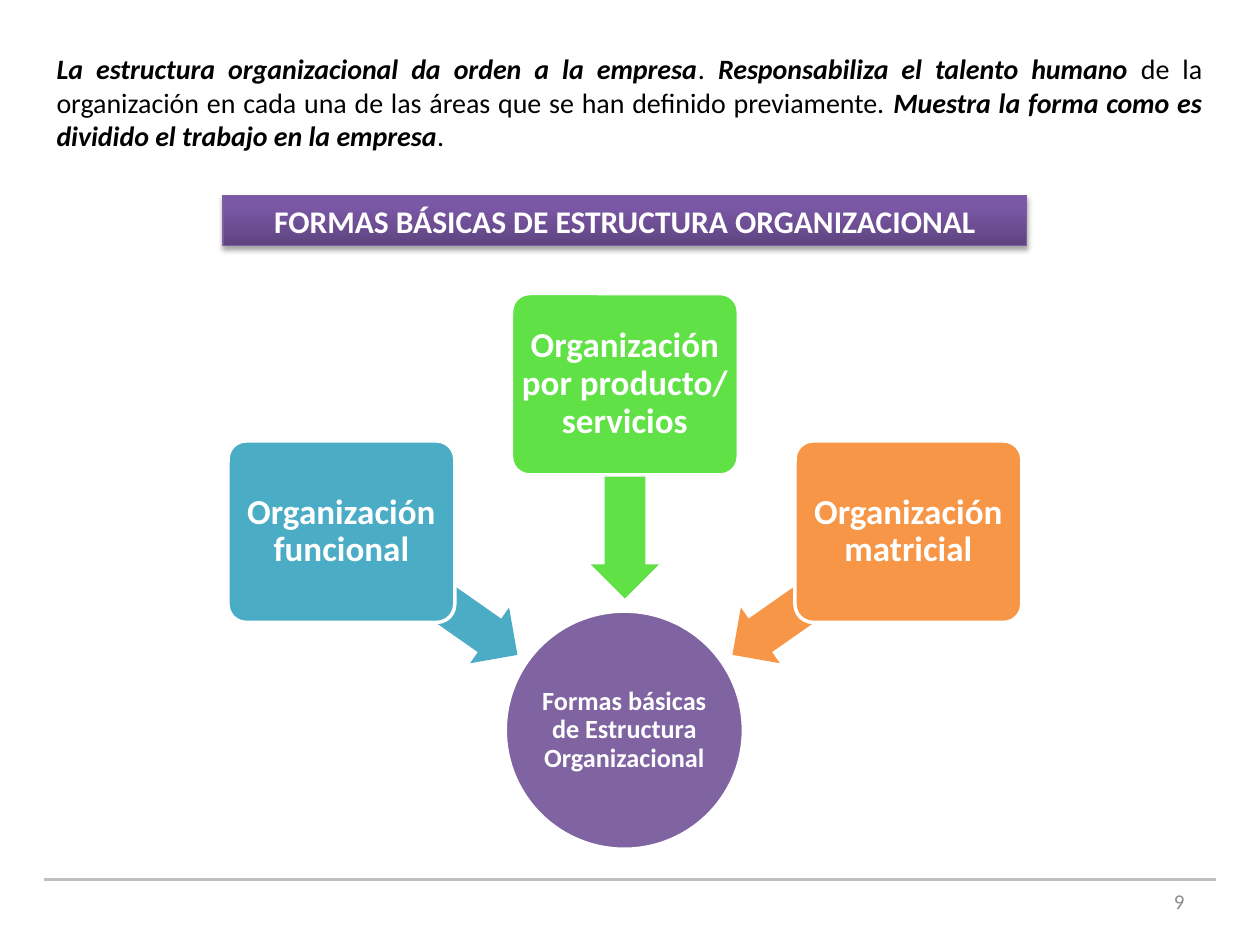
from copy import deepcopy

from lxml import etree
from pptx import Presentation
from pptx import util as u
from pptx.dml.color import RGBColor
from pptx.enum import shapes, text
from pptx.oxml import ns

FONT = "Calibri"
BLACK = RGBColor(0x00, 0x00, 0x00)
WHITE = RGBColor(0xFF, 0xFF, 0xFF)
PURPLE = RGBColor(0x80, 0x64, 0xA2)
TEAL = RGBColor(0x4B, 0xAC, 0xC6)
GREEN = RGBColor(0x60, 0xE1, 0x46)
ORANGE = RGBColor(0xF7, 0x96, 0x46)
RULE_GREY = RGBColor(0xBF, 0xBF, 0xBF)
NUMBER_GREY = RGBColor(0x8C, 0x8C, 0x8C)
BANNER_EDGE = RGBColor(0x7D, 0x60, 0xA0)
BANNER_STOPS = [
    (0, RGBColor(0x5F, 0x44, 0x80)),
    (0.8, RGBColor(0x7B, 0x58, 0xA6)),
    (1, RGBColor(0x7C, 0x57, 0xA8)),
]

CARD_LEFT, CARD_STEP, CARD_WIDTH, CARD_HEIGHT = 1.81, 2.25, 1.8, 1.44
ARROW_CENTRE, ARROW_STEP, ARROW_WIDTH, ARROW_HEIGHT = 3.41, 1.55, 1.7, 0.54

FORMS = [
    ("Organización funcional", TEAL, 3.5, 4.71, 215),
    ("Organización por producto/ servicios", GREEN, 2.33, 3.9, 270),
    ("Organización matricial", ORANGE, 3.5, 4.71, 325),
]
INTRO = [
    ("La estructura organizacional da orden a la empresa", True),
    (". ", False),
    ("Responsabiliza el talento humano ", True),
    ("de la organización en cada una de las áreas que se han definido previamente. ", False),
    ("Muestra la forma como es dividido el trabajo en la empresa", True),
    (".", False),
]


def inches(*lengths):
    """Convert lengths in inches to slide units."""
    return [u.Inches(length) for length in lengths]


def style(para, size, colour, align, bold=None):
    """Set the font and alignment of a paragraph."""
    para.alignment = align
    para.font.name = FONT
    para.font.size = u.Pt(size)
    para.font.bold = bold
    para.font.color.rgb = colour


def add_block(page, kind, place, colour, adjustments=()):
    """Add a flat filled shape without outline or shadow."""
    block = page.shapes.add_shape(kind, *inches(*place))
    block.shadow.inherit = False
    block.fill.solid()
    block.fill.fore_color.rgb = colour
    block.line.fill.background()
    for index, value in enumerate(adjustments):
        block.adjustments[index] = value
    return block


def add_node(page, kind, place, colour, label, size, inset, adjustments=()):
    """Add a white-edged shape with a centred label."""
    node = add_block(page, kind, place, colour, adjustments)
    node.line.color.rgb = WHITE
    node.line.width = u.Pt(2)
    frame = node.text_frame
    frame.word_wrap = True
    frame.vertical_anchor = text.MSO_ANCHOR.MIDDLE
    frame.margin_left = frame.margin_right = u.Inches(inset)
    frame.margin_top = frame.margin_bottom = u.Inches(inset)
    para = frame.paragraphs[0]
    para.text = label
    para.line_spacing = 0.9
    style(para, size, WHITE, text.PP_ALIGN.CENTER, True)


def add_text(page, place, spans, size, colour, align, anchor):
    """Add a wrapped text box of plain and emphasised spans."""
    box = page.shapes.add_textbox(*inches(*place))
    box.text_frame.word_wrap = True
    box.text_frame.vertical_anchor = anchor
    para = box.text_frame.paragraphs[0]
    style(para, size, colour, align)
    for words, strong in spans:
        span = para.add_run()
        span.text = words
        span.font.bold = span.font.italic = strong


def add_diagram(page):
    """Add the three forms with arrows converging on the central circle."""
    add_node(page, shapes.MSO_SHAPE.OVAL, (4.01, 4.85, 1.89, 1.89), PURPLE,
             "Formas básicas de Estructura Organizacional", 15, 0.01)
    for column, (label, colour, top, arrow_middle, angle) in enumerate(FORMS):
        centre = ARROW_CENTRE + column * ARROW_STEP
        place = (centre - ARROW_WIDTH / 2, arrow_middle - ARROW_HEIGHT / 2,
                 ARROW_WIDTH, ARROW_HEIGHT)
        arrow = add_block(page, shapes.MSO_SHAPE.LEFT_ARROW, place, colour, (0.6, 0.5))
        arrow.rotation = angle
        place = (CARD_LEFT + column * CARD_STEP, top, CARD_WIDTH, CARD_HEIGHT)
        add_node(page, shapes.MSO_SHAPE.ROUNDED_RECTANGLE, place, colour,
                 label, 20, 0.04, (0.1,))


def fill_gradient(shape, stops, angle):
    """Fill a shape with a linear gradient of any number of stops."""
    shape.fill.gradient()
    shape.fill.gradient_angle = angle
    stop_list = shape._element.spPr.find(".//" + ns.qn("a:gsLst"))
    while len(stop_list) < len(stops):
        stop_list.append(deepcopy(stop_list[-1]))
    for stop, (position, colour) in zip(shape.fill.gradient_stops, stops):
        stop.position = position
        stop.color.rgb = colour


def add_shadow(shape):
    """Give a shape a soft black shadow below it."""
    shape.shadow.inherit = False
    effects = shape._element.spPr.find(ns.qn("a:effectLst"))
    shadow = etree.SubElement(effects, ns.qn("a:outerShdw"), blurRad=str(u.Pt(3.1)),
                              dist=str(u.Pt(1.8)), dir="5400000", rotWithShape="0")
    colour = etree.SubElement(shadow, ns.qn("a:srgbClr"), val="000000")
    etree.SubElement(colour, ns.qn("a:alpha"), val="35000")


def format_title(title):
    """Turn the title placeholder into the purple banner."""
    title.left, title.top, title.width, title.height = inches(1.77, 1.55, 6.38, 0.4)
    fill_gradient(title, BANNER_STOPS, 90)
    title.line.color.rgb = BANNER_EDGE
    title.line.width = u.Pt(0.75)
    add_shadow(title)
    title.text_frame.text = "FORMAS BÁSICAS DE ESTRUCTURA ORGANIZACIONAL"
    title.text_frame.auto_size = text.MSO_AUTO_SIZE.NONE
    title.text_frame.vertical_anchor = text.MSO_ANCHOR.TOP
    style(title.text_frame.paragraphs[0], 18, WHITE, text.PP_ALIGN.CENTER, True)


def add_rule(page):
    """Add the grey line above the footer."""
    rule = page.shapes.add_connector(shapes.MSO_CONNECTOR.STRAIGHT,
                                     *inches(0.35, 6.98, 9.65, 6.98))
    rule.line.color.rgb = RULE_GREY
    rule.line.width = u.Pt(2)
    etree.SubElement(rule._element.spPr, ns.qn("a:effectLst"))


def main():
    """Build and save the slide."""
    deck = Presentation()
    deck.slide_width, deck.slide_height = inches(10, 7.5)
    page = deck.slides.add_slide(deck.slide_layouts[5])
    add_text(page, (7.17, 6.95, 2.33, 0.4), [("9", False)], 12, NUMBER_GREY,
             text.PP_ALIGN.RIGHT, text.MSO_ANCHOR.MIDDLE)
    add_rule(page)
    add_diagram(page)
    add_text(page, (0.35, 0.36, 9.29, 0.91), INTRO, 16, BLACK,
             text.PP_ALIGN.JUSTIFY, text.MSO_ANCHOR.TOP)
    format_title(page.shapes.title)
    deck.save("out.pptx")


if __name__ == "__main__":
    main()
